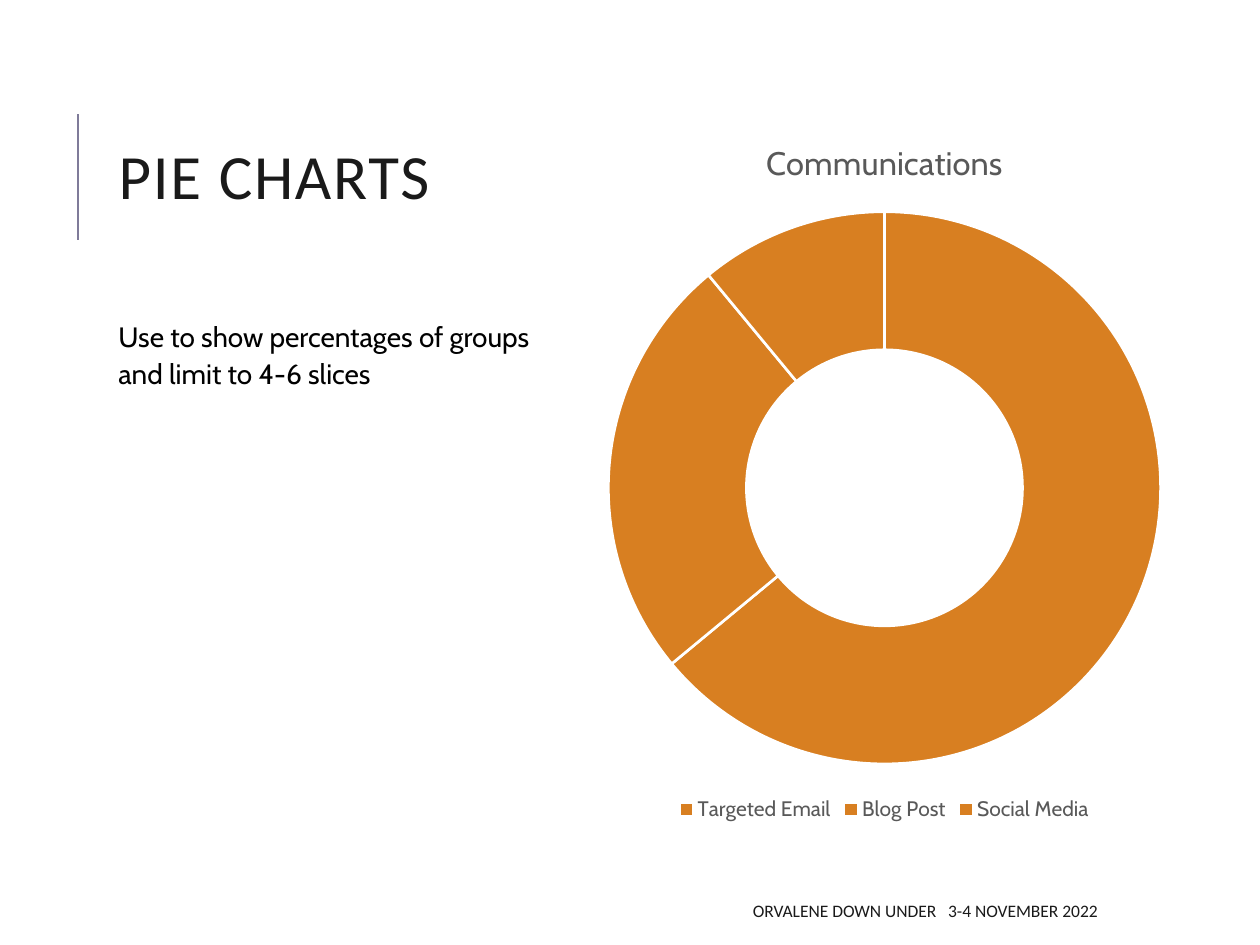
"""Build the pie charts slide with a doughnut chart."""
from dataclasses import dataclass

from lxml import etree
from pptx import Presentation
from pptx.chart.data import CategoryChartData
from pptx.dml.color import RGBColor
from pptx.enum.chart import XL_CHART_TYPE, XL_LEGEND_POSITION
from pptx.enum.shapes import MSO_CONNECTOR
from pptx.enum.text import MSO_ANCHOR, MSO_AUTO_SIZE, PP_ALIGN
from pptx.oxml.ns import qn
from pptx.util import Emu, Pt

DOUGHNUT = XL_CHART_TYPE.DOUGHNUT
BOTTOM = XL_LEGEND_POSITION.BOTTOM
STRAIGHT = MSO_CONNECTOR.STRAIGHT
TOP, MIDDLE = MSO_ANCHOR.TOP, MSO_ANCHOR.MIDDLE
LEFT, RIGHT = PP_ALIGN.LEFT, PP_ALIGN.RIGHT
NO_FIT = MSO_AUTO_SIZE.NONE
EMU_PER_PX = 914400 / 126


@dataclass(frozen=True)
class Style:
    size: float
    font: str
    color: str


@dataclass(frozen=True)
class Theme:
    title: Style = Style(36, "Calibri", "1A1A1A")
    body: Style = Style(16, "Cabin", "000000")
    footer: Style = Style(10, "Calibri", "1A1A1A")
    chart: Style = Style(10, "Cabin", "000000")
    chart_title: Style = Style(18.6, "Cabin", "595959")
    legend: Style = Style(12, "Cabin", "595959")
    slice: str = "D87F21"
    gap: str = "FFFFFF"
    rule: str = "7F7B99"


@dataclass(frozen=True)
class Box:
    x: int
    y: int
    w: int
    h: int

    def emu(self) -> list[Emu]:
        return [px(v) for v in (self.x, self.y, self.w, self.h)]


@dataclass(frozen=True)
class Text:
    text: str
    box: Box
    style: Style
    anchor: MSO_ANCHOR
    align: PP_ALIGN
    line: float = 1.0
    before: int = 0
    after: int = 0


THEME = Theme()
TITLE = Text("PIE CHARTS", Box(106, 66, 454, 230), THEME.title, MIDDLE, LEFT, 0.8)
BODY = Text("Use to show percentages of groups and limit to 4-6 slices",
            Box(106, 311, 454, 518), THEME.body, TOP, LEFT, 1.08, 6, 2)
FOOTER = Text("ORVALENE DOWN UNDER   3-4 NOVEMBER 2022",
              Box(500, 892, 610, 38), THEME.footer, MIDDLE, RIGHT)
CHART_BOX = Box(591, 113, 587, 714)
CHART_NAME = "Communications"
SHARES = {"Targeted Email": 64, "Blog Post": 25, "Social Media": 11}


def px(value: int) -> Emu:
    return Emu(round(value * EMU_PER_PX))


def set_font(font, style: Style) -> None:
    font.size = Pt(style.size)
    font.name = style.font
    font.bold = False
    font.color.rgb = RGBColor.from_string(style.color)


def write_text(sp, item: Text) -> None:
    sp.left, sp.top, sp.width, sp.height = item.box.emu()
    tf = sp.text_frame
    tf.text = item.text
    tf.word_wrap = True
    tf.auto_size = NO_FIT
    tf.vertical_anchor = item.anchor
    p = tf.paragraphs[0]
    p.alignment = item.align
    p.line_spacing = item.line
    p.space_before, p.space_after = Pt(item.before), Pt(item.after)
    set_font(p.runs[0].font, item.style)


def add_text(s, item: Text) -> None:
    write_text(s.shapes.add_textbox(*item.box.emu()), item)


def add_rule(s, x: int, top: int, bottom: int) -> None:
    rule = s.shapes.add_connector(STRAIGHT, px(x), px(bottom), px(x), px(top))
    rule.line.color.rgb = RGBColor.from_string(THEME.rule)
    rule.line.width = Pt(1.5)
    etree.SubElement(rule.element.spPr, qn("a:effectLst"))


def add_doughnut(s, box: Box, name: str, shares: dict[str, int]) -> None:
    data = CategoryChartData()
    data.categories = list(shares)
    data.add_series(name, list(shares.values()))
    chart = s.shapes.add_chart(DOUGHNUT, *box.emu(), data).chart
    set_font(chart.font, THEME.chart)
    chart.has_title = True
    tf = chart.chart_title.text_frame
    tf.text = name
    set_font(tf.paragraphs[0].runs[0].font, THEME.chart_title)
    chart.has_legend = True
    chart.legend.position = BOTTOM
    chart.legend.include_in_layout = False
    set_font(chart.legend.font, THEME.legend)
    plot = chart.plots[0]
    plot.vary_by_categories = True
    for i in range(len(shares)):
        fmt = plot.series[0].points[i].format
        fmt.fill.solid()
        fmt.fill.fore_color.rgb = RGBColor.from_string(THEME.slice)
        fmt.line.color.rgb = RGBColor.from_string(THEME.gap)
        fmt.line.width = Pt(1.5)
    chart.element.find(".//" + qn("c:holeSize")).set("val", "75")


def main() -> None:
    prs = Presentation()
    prs.slide_width, prs.slide_height = px(1260), px(945)
    s = prs.slides.add_slide(prs.slide_layouts[5])
    add_rule(s, 78, 114, 240)
    title = s.shapes.title
    write_text(title, TITLE)
    title.text_frame.paragraphs[0].runs[0].font._element.set("spc", "100")
    add_doughnut(s, CHART_BOX, CHART_NAME, SHARES)
    add_text(s, BODY)
    add_text(s, FOOTER)
    prs.save("out.pptx")


if __name__ == "__main__":
    main()
